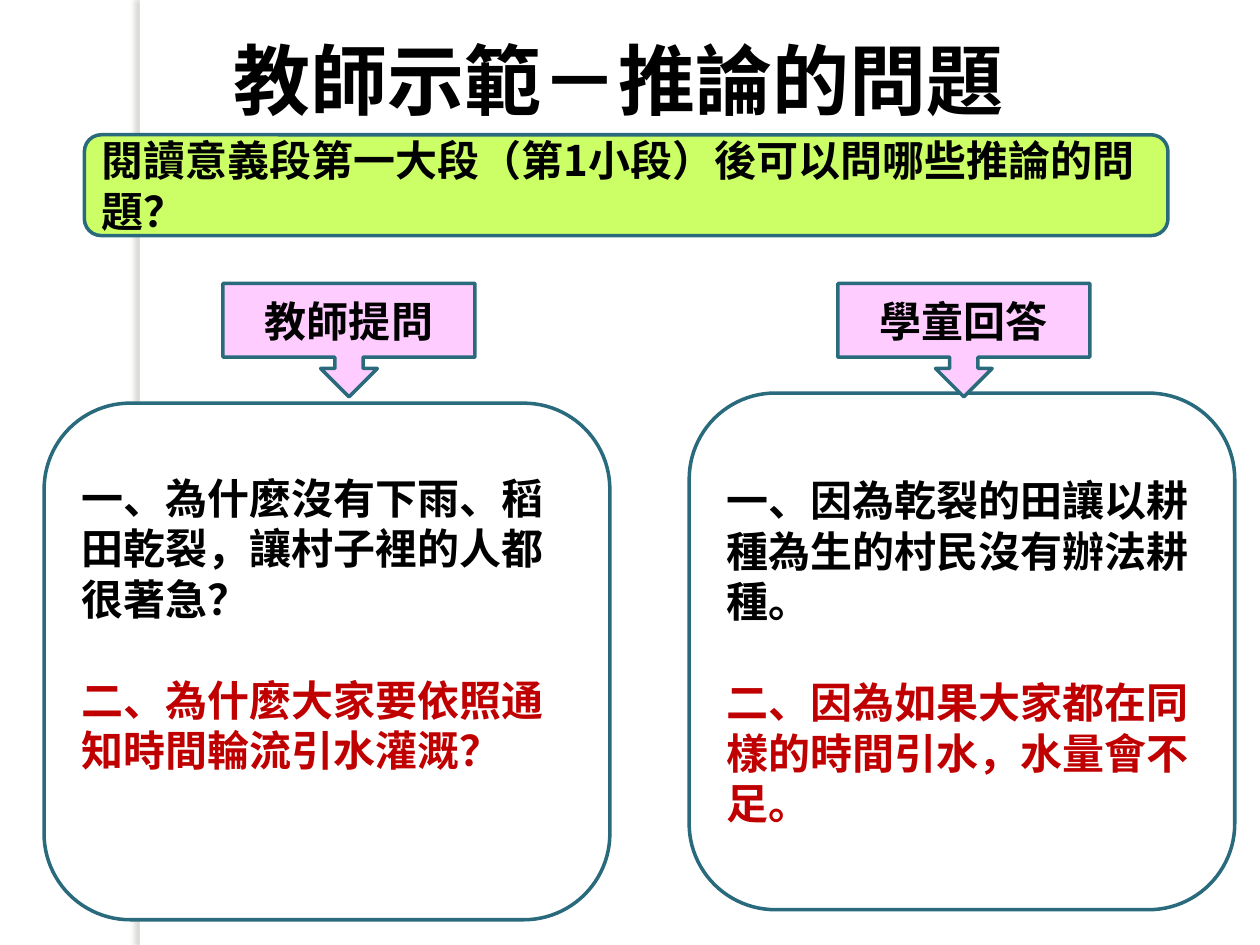
import pptx
import pptx.util
import pptx.dml.color
import pptx.enum.shapes
import pptx.enum.text
import pptx.oxml
import lxml.etree
from pptx.util import Inches

FONT = "Noto Sans CJK SC"
BLACK, RED, TEAL = "000000", "C00000", "296B7C"
SHAPE = pptx.enum.shapes.MSO_SHAPE
ALIGN = pptx.enum.text.PP_ALIGN
ANCHOR = pptx.enum.text.MSO_ANCHOR
NS = "http://schemas.openxmlformats.org/drawingml/2006/main"


def rgb(value):
    return pptx.dml.color.RGBColor.from_string(value)


def write(sp, lines, size, align, anchor):
    """Fill a shape with (text, colour) paragraphs in bold."""
    tf = sp.text_frame
    tf.word_wrap = True
    tf.vertical_anchor = anchor
    for i, (text, color) in enumerate(lines):
        p = tf.paragraphs[0] if i == 0 else tf.add_paragraph()
        p.text = text
        p.alignment = align
        if i:
            p.space_before = pptx.util.Pt(29)
        r = p.runs[0]
        r.font.size = pptx.util.Pt(size)
        r.font.bold = True
        r.font.name = FONT
        r.font.color.rgb = rgb(color)
        ea = lxml.etree.SubElement(r.font._element, f"{{{NS}}}ea")
        ea.set("typeface", FONT)


prs = pptx.Presentation()
prs.slide_width, prs.slide_height = Inches(10), Inches(7.5)
s = prs.slides.add_slide(prs.slide_layouts[5])

# Title
title = s.shapes.title
title.left, title.top = Inches(0.51), Inches(0.21)
title.width, title.height = Inches(8.95), Inches(1.21)
write(title, [("教師示範－推論的問題 ", BLACK)], 44, ALIGN.CENTER, ANCHOR.TOP)

# Vertical strip with a soft shadow to its left, behind everything
strip = s.shapes.add_shape(SHAPE.RECTANGLE, Inches(1.11), 0, Inches(0.08), Inches(7.5))
strip.fill.solid()
strip.fill.fore_color.rgb = rgb("FFFFFF")
strip.line.fill.background()
strip._element.spPr.append(pptx.oxml.parse_xml(
    f'<a:effectLst xmlns:a="{NS}"><a:outerShdw blurRad="38100" dist="38100" dir="10800000">'
    '<a:srgbClr val="736F63"><a:alpha val="25000"/></a:srgbClr></a:outerShdw></a:effectLst>'))
s.shapes._spTree.insert(2, strip._element)

# Question band, answer boxes and the callouts that point at them
questions = [("一、為什麼沒有下雨、稻田乾裂，讓村子裡的人都很著急？", BLACK),
             ("二、為什麼大家要依照通知時間輪流引水灌溉？", RED)]
answers = [("一、因為乾裂的田讓以耕種為生的村民沒有辦法耕種。", BLACK),
           ("二、因為如果大家都在同樣的時間引水，水量會不足。", RED)]
band = [("閱讀意義段第一大段（第1小段）後可以問哪些推論的問題？", BLACK)]
box, callout = SHAPE.ROUNDED_RECTANGLE, SHAPE.DOWN_ARROW_CALLOUT
parts = [  # kind, left, top, width, height, fill, lines, align, bottom inset
    (box, 0.67, 1.07, 8.6, 0.8, "CCFF66", band, ALIGN.LEFT, 0.05),
    (callout, 1.77, 2.25, 2, 0.9, "FFCCFF", [("教師提問", BLACK)], ALIGN.CENTER, 0.05),
    (box, 0.35, 3.2, 4.49, 4.1, "FFFFFF", questions, ALIGN.LEFT, 0.65),
    (box, 5.47, 3.12, 4.33, 4.1, "FFFFFF", answers, ALIGN.LEFT, 0.05),
    (callout, 6.65, 2.25, 2, 0.9, "FFCCFF", [("學童回答", BLACK)], ALIGN.CENTER, 0.05),
]
for kind, left, top, width, height, fill, lines, align, inset in parts:
    sp = s.shapes.add_shape(kind, Inches(left), Inches(top), Inches(width), Inches(height))
    sp.shadow.inherit = False
    sp.fill.solid()
    sp.fill.fore_color.rgb = rgb(fill)
    sp.line.color.rgb = rgb(TEAL)
    sp.line.width = pptx.util.Pt(2)
    sp.text_frame.margin_bottom = Inches(inset)
    write(sp, lines, 24, align, ANCHOR.MIDDLE)

prs.save("out.pptx")
